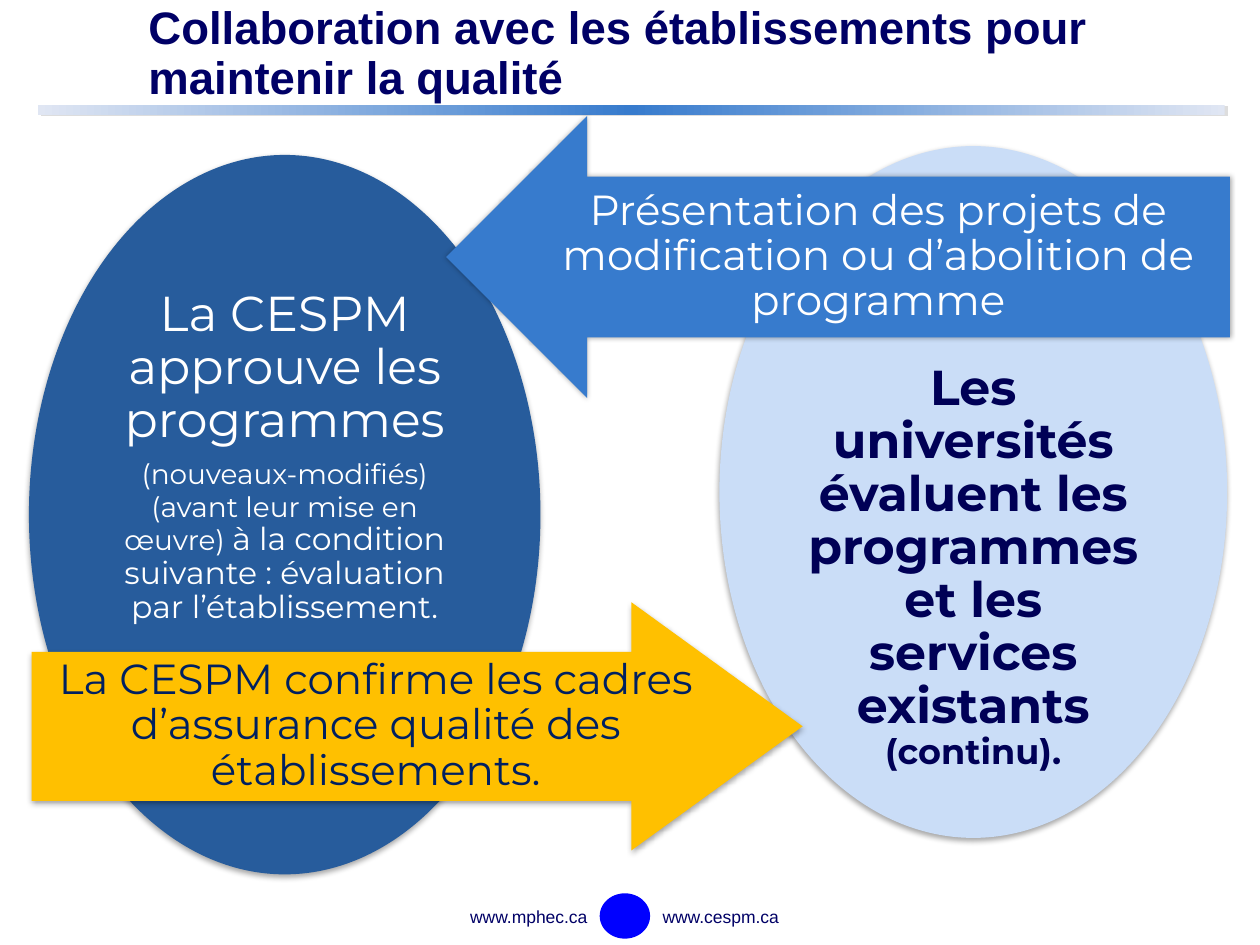
from dataclasses import dataclass
from typing import Any

import lxml.etree
import pptx
import pptx.dml.color
import pptx.enum.shapes
import pptx.enum.text
import pptx.oxml.ns
import pptx.util

Inches = pptx.util.Inches
Kind = pptx.enum.shapes.MSO_SHAPE
Side = pptx.enum.text.PP_ALIGN
Hold = pptx.enum.text.MSO_ANCHOR
Box = tuple[float, float, float, float]


@dataclass(frozen=True)
class Theme:
    navy: str = "000066"
    ink: str = "000056"
    dusk: str = "002060"
    deep: str = "275C9C"
    blue: str = "377BCD"
    pale: str = "CADDF7"
    mist: str = "E0E6F3"
    gold: str = "FFC000"
    logo: str = "0000FF"
    black: str = "000000"
    gray: str = "DDDDDD"
    white: str = "FFFFFF"
    plain: str = "Arial"
    brand: str = "Montserrat"
    title: int = 26
    big: int = 28
    arrow: int = 24
    mid: int = 20
    body: int = 18
    small: int = 16
    foot: int = 10


@dataclass(frozen=True)
class Shade:
    color: str
    alpha: int
    blur: float
    dist: float
    angle: int


@dataclass(frozen=True)
class Piece:
    kind: Any
    box: Box
    fill: str
    ink: str
    runs: list[tuple[str, int]]
    pad: Box
    shade: Shade
    bold: bool = False
    hold: Any = Hold.MIDDLE
    curve: tuple[float, ...] = ()


@dataclass(frozen=True)
class Label:
    box: Box
    text: str
    size: int
    side: Any = Side.LEFT
    bold: bool = False
    space: float = 1.0


THEME = Theme()
DROP = Shade(THEME.black, 35, 3.1, 1.8, 90)
GLOW = Shade(THEME.black, 35, 3.1, 0, 0)
EDGE = Shade(THEME.gray, 100, 0, 2.2, 27)

PIECES = [
    Piece(Kind.OVAL, (0.23, 1.23, 4.06, 5.71), THEME.deep, THEME.white,
          [("La CESPM approuve les programmes", THEME.big),
           (" (nouveaux-modifiés)", THEME.small),
           (" ", THEME.arrow),
           ("(avant leur mise en œuvre) ", THEME.small),
           ("à la condition suivante\u00a0: évaluation par l’établissement.", THEME.body)],
          (0, 0.23, 0, 0), DROP, hold=Hold.TOP),
    Piece(Kind.OVAL, (5.71, 1.16, 4.03, 5.49), THEME.pale, THEME.ink,
          [("Les universités évaluent les programmes et les services existants ", THEME.big),
           ("(continu).", THEME.mid)],
          (0, 0.92, 0, 0), DROP, bold=True, hold=Hold.TOP),
    Piece(Kind.RIGHT_ARROW, (0.25, 4.78, 6.12, 1.97), THEME.gold, THEME.dusk,
          [("La CESPM confirme les cadres d’assurance qualité des établissements.", THEME.arrow)],
          (0.16, 0, 0, 0), DROP, curve=(0.6, 0.69)),
    Piece(Kind.LEFT_ARROW, (3.54, 0.92, 6.22, 2.24), THEME.blue, THEME.white,
          [("Présentation des projets de modification ou d’abolition de programme", THEME.arrow)],
          (0.1, 0.05, 0.1, 0.05), GLOW, curve=(0.57, 0.5)),
]

LABELS = [
    Label((2.95, 7.14, 1.81, 0.27), "www.mphec.ca", THEME.foot, Side.RIGHT),
    Label((5.16, 7.14, 1.25, 0.27), "www.cespm.ca", THEME.foot),
    Label((1.08, 0.03, 8.63, 0.81),
          "Collaboration avec les établissements pour maintenir la qualité",
          THEME.title, bold=True, space=0.9),
]


def tint(code: str) -> pptx.dml.color.RGBColor:
    return pptx.dml.color.RGBColor.from_string(code)


def node(root: Any, tag: str, **marks: Any) -> Any:
    item = lxml.etree.SubElement(root, pptx.oxml.ns.qn(tag))
    for key, value in marks.items():
        item.set(key, str(value))
    return item


def write(shape: Any, runs: list[tuple[str, int]], *, font: str, color: str,
          side: Any, hold: Any, pad: Box, bold: bool = False, space: float = 1.0) -> None:
    frame = shape.text_frame
    frame.word_wrap = True
    frame.vertical_anchor = hold
    (frame.margin_left, frame.margin_top,
     frame.margin_right, frame.margin_bottom) = map(Inches, pad)
    para = frame.paragraphs[0]
    para.alignment = side
    para.line_spacing = space
    for text, size in runs:
        run = para.add_run()
        run.text = text
        run.font.name = font
        run.font.size = pptx.util.Pt(size)
        run.font.bold = bold
        run.font.color.rgb = tint(color)


def form(slide: Any, kind: Any, box: Box, fill: str) -> Any:
    shape = slide.shapes.add_shape(kind, *map(Inches, box))
    shape.shadow.inherit = False
    shape.fill.solid()
    shape.fill.fore_color.rgb = tint(fill)
    shape.line.fill.background()
    return shape


def cast(shape: Any, shade: Shade) -> None:
    root = shape._element.spPr.find(pptx.oxml.ns.qn("a:effectLst"))
    outer = node(root, "a:outerShdw", blurRad=pptx.util.Pt(shade.blur),
                 dist=pptx.util.Pt(shade.dist), dir=shade.angle * 60000,
                 algn="ctr", rotWithShape=0)
    color = node(outer, "a:srgbClr", val=shade.color)
    node(color, "a:alpha", val=shade.alpha * 1000)


def blend(shape: Any, stops: list[tuple[int, str]]) -> None:
    shape.fill.gradient()
    shape.fill.gradient_angle = 0
    root = shape._element.spPr.find(".//" + pptx.oxml.ns.qn("a:gsLst"))
    for old in list(root):
        root.remove(old)
    for place, color in stops:
        stop = node(root, "a:gs", pos=place * 1000)
        node(stop, "a:srgbClr", val=color)


def draw(slide: Any, piece: Piece) -> None:
    shape = form(slide, piece.kind, piece.box, piece.fill)
    for index, value in enumerate(piece.curve):
        shape.adjustments[index] = value
    cast(shape, piece.shade)
    write(shape, piece.runs, font=THEME.brand, color=piece.ink, side=Side.CENTER,
          hold=piece.hold, pad=piece.pad, bold=piece.bold, space=0.9)


def note(slide: Any, label: Label) -> None:
    shape = slide.shapes.add_textbox(*map(Inches, label.box))
    write(shape, [(label.text, label.size)], font=THEME.plain, color=THEME.navy,
          side=label.side, hold=Hold.MIDDLE, pad=(0.1, 0.05, 0.1, 0.05),
          bold=label.bold, space=label.space)


def main() -> None:
    deck = pptx.Presentation()
    deck.slide_width, deck.slide_height = Inches(10), Inches(7.5)
    slide = deck.slides.add_slide(deck.slide_layouts[6])
    bar = form(slide, Kind.RECTANGLE, (0.3, 0.83, 9.42, 0.08), THEME.blue)
    blend(bar, [(0, THEME.mist), (50, THEME.blue), (100, THEME.mist)])
    cast(bar, EDGE)
    form(slide, Kind.OVAL, (4.76, 7.09, 0.4, 0.36), THEME.logo)
    for label in LABELS:
        note(slide, label)
    for piece in PIECES:
        draw(slide, piece)
    deck.save("out.pptx")


if __name__ == "__main__":
    main()
